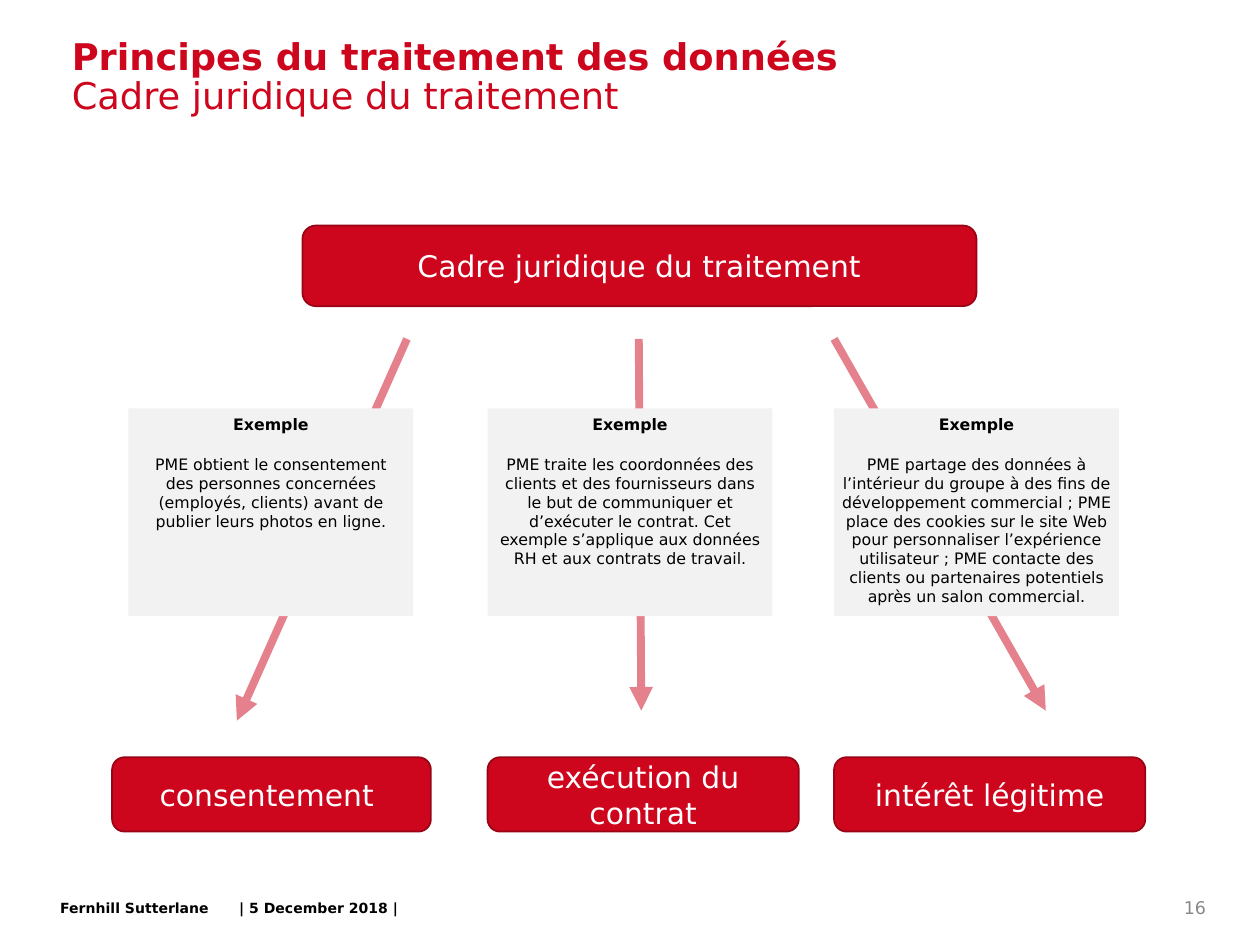
import dataclasses

import lxml.etree
import pptx
import pptx.dml.color
import pptx.enum.shapes
import pptx.enum.text
import pptx.oxml.ns
import pptx.util

Inches = pptx.util.Inches
Pt = pptx.util.Pt
Align = pptx.enum.text.PP_ALIGN
Anchor = pptx.enum.text.MSO_ANCHOR
ShapeKind = pptx.enum.shapes.MSO_SHAPE


@dataclasses.dataclass(frozen=True)
class Theme:
    font: str = "DejaVu Sans"
    accent: str = "CD051D"
    outline: str = "980415"
    panel: str = "F2F2F2"
    dark: str = "000000"
    light: str = "FFFFFF"
    muted: str = "898989"
    title_size: float = 21
    label_size: float = 17
    page_size: float = 10
    example_size: float = 9
    footer_size: float = 8


THEME = Theme()


def rgb(value):
    return pptx.dml.color.RGBColor.from_string(value)


def write(paragraph, text, *, size, color, bold=False, align=Align.LEFT):
    paragraph.alignment = align
    run = paragraph.add_run()
    run.text = text
    run.font.name = THEME.font
    run.font.size = Pt(size)
    run.font.bold = bold
    run.font.color.rgb = rgb(color)


class SlideBuilder:
    def __init__(self, presentation, theme):
        self.theme = theme
        self.slide = presentation.slides.add_slide(presentation.slide_layouts[5])

    def title(self, heading, subheading, left, top, width, height):
        shape = self.slide.shapes.title
        shape.left, shape.top = Inches(left), Inches(top)
        shape.width, shape.height = Inches(width), Inches(height)
        frame = shape.text_frame
        frame.auto_size = pptx.enum.text.MSO_AUTO_SIZE.NONE
        frame.vertical_anchor = Anchor.MIDDLE
        paragraph = frame.paragraphs[0]
        paragraph.line_spacing = 0.9
        style = {"size": self.theme.title_size, "color": self.theme.accent}
        write(paragraph, heading, bold=True, **style)
        paragraph.add_line_break()
        write(paragraph, subheading, **style)

    def text(self, text, left, top, width, height, anchor=Anchor.TOP, **style):
        shape = self.slide.shapes.add_textbox(
            Inches(left), Inches(top), Inches(width), Inches(height))
        shape.text_frame.word_wrap = True
        shape.text_frame.vertical_anchor = anchor
        write(shape.text_frame.paragraphs[0], text, **style)

    def box(self, kind, fill, anchor, left, top, width, height):
        shape = self.slide.shapes.add_shape(
            kind, Inches(left), Inches(top), Inches(width), Inches(height))
        shape.shadow.inherit = False
        shape.fill.solid()
        shape.fill.fore_color.rgb = rgb(fill)
        shape.text_frame.word_wrap = True
        shape.text_frame.vertical_anchor = anchor
        return shape

    def label(self, text, left, top, width, height):
        shape = self.box(ShapeKind.ROUNDED_RECTANGLE, self.theme.accent,
                         Anchor.MIDDLE, left, top, width, height)
        shape.line.color.rgb = rgb(self.theme.outline)
        shape.line.width = Pt(1)
        write(shape.text_frame.paragraphs[0], text, size=self.theme.label_size,
              color=self.theme.light, align=Align.CENTER)

    def example(self, text, left, top, width, height, side_inset):
        shape = self.box(ShapeKind.RECTANGLE, self.theme.panel,
                         Anchor.TOP, left, top, width, height)
        shape.line.fill.background()
        frame = shape.text_frame
        frame.margin_left = frame.margin_right = Inches(side_inset)
        paragraphs = (frame.paragraphs[0], frame.add_paragraph())
        for paragraph, content, bold in zip(paragraphs, ("Exemple", text), (True, False)):
            paragraph.space_before = Pt(12)
            write(paragraph, content, size=self.theme.example_size,
                  color=self.theme.dark, bold=bold, align=Align.CENTER)

    def arrow(self, start, end):
        connector = self.slide.shapes.add_connector(
            pptx.enum.shapes.MSO_CONNECTOR.STRAIGHT,
            *(Inches(value) for value in (*start, *end)))
        connector.line.color.rgb = rgb(self.theme.accent)
        connector.line.width = Pt(4.5)
        qn = pptx.oxml.ns.qn
        properties = connector._element.spPr
        line = properties.find(qn("a:ln"))
        color = line.find(".//" + qn("a:srgbClr"))
        lxml.etree.SubElement(color, qn("a:alpha"), val="50000")
        lxml.etree.SubElement(line, qn("a:tailEnd"), type="triangle")
        lxml.etree.SubElement(properties, qn("a:effectLst"))


def main():
    presentation = pptx.Presentation()
    presentation.slide_width = Inches(10)
    presentation.slide_height = Inches(7.5)
    builder = SlideBuilder(presentation, THEME)

    builder.title("Principes du traitement des données",
                  "Cadre juridique du traitement", 0.47, 0.44, 9.06, 0.36)
    for text, left, width in (("Fernhill Sutterlane", 0.38, 1.73),
                              ("| 5 December 2018 |", 1.8, 1.64)):
        builder.text(text, left, 7.09, width, 0.24, size=THEME.footer_size,
                     color=THEME.dark, bold=True)
    builder.text("16", 8.8, 7.05, 0.87, 0.3, anchor=Anchor.MIDDLE,
                 size=THEME.page_size, color=THEME.muted, align=Align.RIGHT)

    builder.label("Cadre juridique du traitement", 2.4, 1.79, 5.35, 0.64)
    for text, left, width in (("consentement ", 0.89, 2.53),
                              ("exécution du contrat", 3.87, 2.47),
                              ("intérêt légitime", 6.62, 2.47)):
        builder.label(text, left, 6.01, width, 0.59)

    for start_x, end in ((5.07, (5.09, 5.64)),
                         (3.23, (1.88, 5.72)),
                         (6.62, (8.3, 5.64))):
        builder.arrow((start_x, 2.69), end)

    examples = (
        ("PME obtient le consentement des personnes concernées (employés, clients) "
         "avant de publier leurs photos en ligne.", 1.02, 0.1),
        ("PME traite les coordonnées des clients et des fournisseurs dans le but de "
         "communiquer et d’exécuter le contrat. Cet exemple s’applique aux données RH "
         "et aux contrats de travail.", 3.87, 0.1),
        ("PME partage des données à l’intérieur du groupe à des fins de développement "
         "commercial ; PME place des cookies sur le site Web pour personnaliser "
         "l’expérience utilisateur ; PME contacte des clients ou partenaires potentiels "
         "après un salon commercial.", 6.62, 0.04),
    )
    for text, left, side_inset in examples:
        builder.example(text, left, 3.24, 2.26, 1.65, side_inset)

    presentation.save("out.pptx")


if __name__ == "__main__":
    main()
